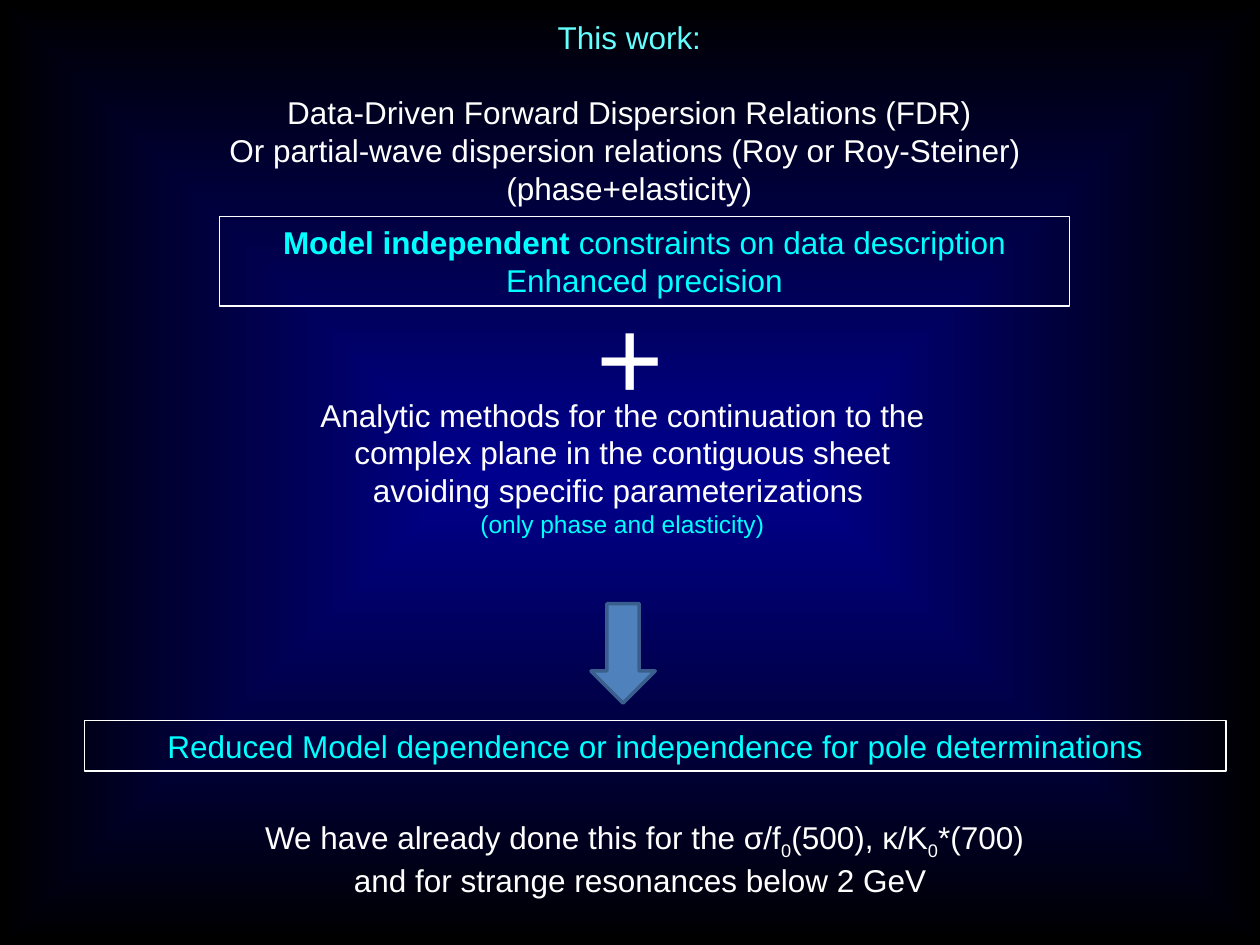
from pptx import Presentation
from pptx.dml.color import RGBColor
from pptx.enum.shapes import MSO_SHAPE as Shape
from pptx.enum.text import MSO_ANCHOR as Anchor, MSO_AUTO_SIZE as AutoSize, PP_ALIGN as Align
from pptx.oxml import parse_xml
from pptx.oxml.ns import nsdecls, qn
from pptx.util import Inches, Pt

WHITE, CYAN, PALE_CYAN = "FFFFFF", "00FFFF", "66FFFF"


def color(value):
    return RGBColor.from_string(value)


def paint_background(slide):
    fill = slide.background.fill
    fill.gradient()
    for stop, value, position in zip(fill.gradient_stops, ("00008E", "000000"), (0, 1)):
        stop.color.rgb = color(value)
        stop.position = position
    gradient = next(slide.element.iter(qn("a:gradFill")))
    gradient.remove(gradient.find(qn("a:lin")))
    gradient.append(parse_xml(
        f'<a:path {nsdecls("a")} path="shape">'
        '<a:fillToRect l="50000" t="50000" r="50000" b="50000"/></a:path>'))


def write_lines(frame, lines, tint, size=18, wrap=True):
    frame.word_wrap = wrap
    frame.auto_size = AutoSize.SHAPE_TO_FIT_TEXT
    frame.vertical_anchor = Anchor.TOP
    frame.text = "\n".join(lines)
    for paragraph in frame.paragraphs:
        paragraph.alignment = Align.CENTER
        for run in paragraph.runs:
            style(run, tint, size)
    return frame.paragraphs


def style(run, tint, size=18):
    run.font.name = "Arial"
    run.font.size = Pt(size)
    run.font.color.rgb = color(tint)


def add_run(paragraph, words, tint, subscript=False):
    run = paragraph.add_run()
    run.text = words
    style(run, tint)
    if subscript:
        run._r.get_or_add_rPr().set("baseline", "-25000")


def add_text(slide, box, lines, tint, size=18, wrap=True):
    frame = slide.shapes.add_textbox(*map(Inches, box)).text_frame
    return write_lines(frame, lines, tint, size, wrap)


def add_framed(slide, box, lines):
    border = slide.shapes.add_shape(Shape.RECTANGLE, *map(Inches, box))
    border.shadow.inherit = False
    border.fill.background()
    border.line.color.rgb = color(WHITE)
    border.line.width = Pt(0.75)
    return write_lines(border.text_frame, lines, CYAN)


def add_dispersion_relations(slide, box):
    heading = add_text(slide, box, [
        "This work:",
        "Data-Driven Forward Dispersion Relations (FDR)",
        "Or partial-wave dispersion relations (Roy or Roy-Steiner) ",
        "(phase+elasticity)"], WHITE, wrap=False)[0]
    style(heading.runs[0], PALE_CYAN)
    heading.space_after = Pt(21.5)


def add_constraints(slide, box):
    claim = add_framed(slide, box, ["Model independent ", "Enhanced precision"])[0]
    claim.runs[0].font.bold = True
    add_run(claim, "constraints on data description", CYAN)


def add_analytic_methods(slide, box):
    remark = add_text(slide, box, [
        "Analytic methods for the continuation to the complex plane in the contiguous sheet",
        "avoiding specific parameterizations ",
        "(only phase and elasticity)"], WHITE)[-1]
    style(remark.runs[0], CYAN, 14)


def add_arrow(slide, box):
    arrow = slide.shapes.add_shape(Shape.DOWN_ARROW, *map(Inches, box))
    arrow.shadow.inherit = False
    arrow.fill.solid()
    arrow.fill.fore_color.rgb = color("4F81BD")
    arrow.line.color.rgb = color("3A5F8C")
    arrow.line.width = Pt(2)


def add_resonances(slide, box):
    done = add_text(slide, box, [
        "We have already done this for the σ/f",
        "and for strange resonances below 2 GeV "], WHITE)[0]
    for words, subscript in (("0", True), ("(500), κ/K", False), ("0", True), ("*(700)", False)):
        add_run(done, words, WHITE, subscript)


def main():
    deck = Presentation()
    deck.slide_width, deck.slide_height = Inches(10), Inches(7.5)
    slide = deck.slides.add_slide(deck.slide_layouts[6])
    paint_background(slide)
    add_dispersion_relations(slide, (1.69, 0.09, 6.61, 1.62))
    add_constraints(slide, (1.74, 1.72, 6.75, 0.71))
    add_text(slide, (4.63, 2.21, 0.74, 1.21), ["+"], WHITE, 66, wrap=False)
    add_analytic_methods(slide, (2.44, 3.09, 5, 1.25))
    add_arrow(slide, (4.69, 4.79, 0.51, 0.79))
    add_framed(slide, (0.67, 5.72, 9.06, 0.4),
               ["Reduced Model dependence or independence for pole determinations"])
    add_resonances(slide, (1.56, 6.44, 7.11, 0.71))
    deck.save("out.pptx")


if __name__ == "__main__":
    main()
